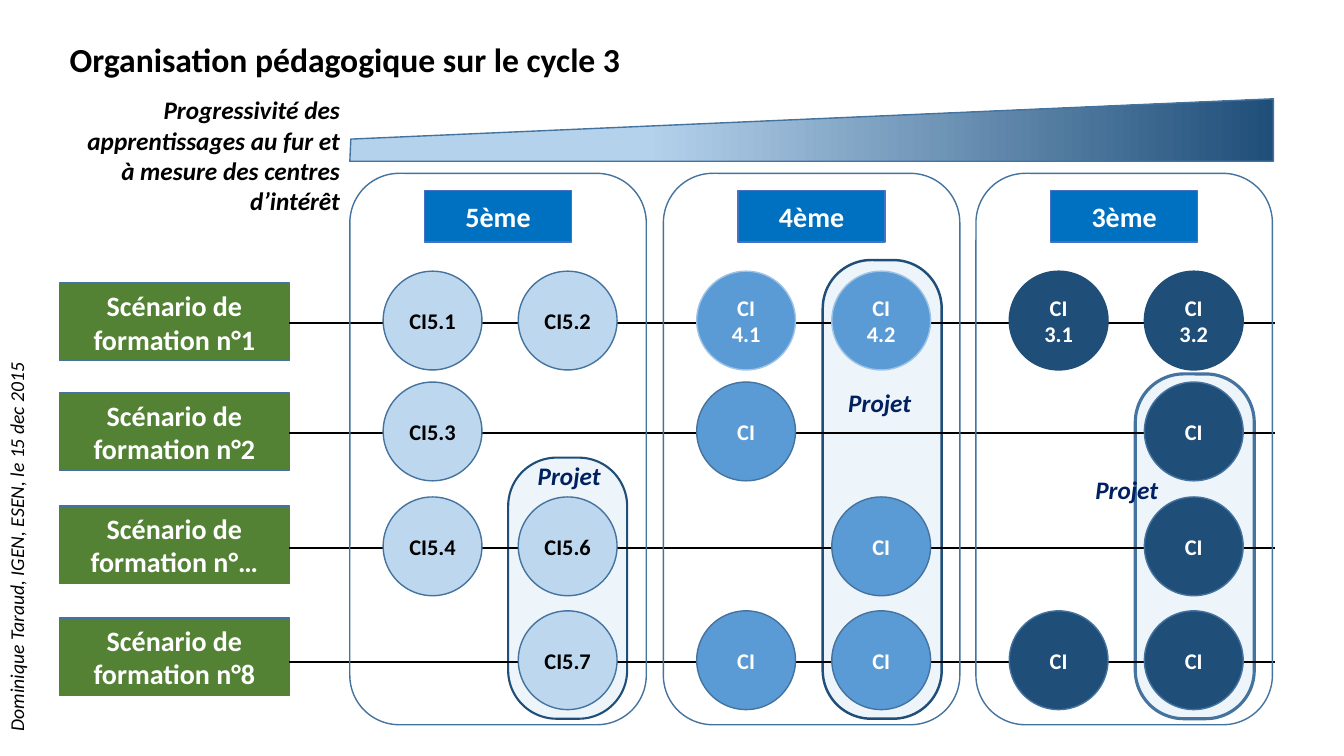
from dataclasses import dataclass

from pptx import Presentation
from pptx.dml.color import RGBColor
from pptx.enum.shapes import MSO_CONNECTOR, MSO_SHAPE
from pptx.enum.text import MSO_ANCHOR, PP_ALIGN
from pptx.oxml.ns import qn
from pptx.oxml.xmlchemy import OxmlElement
from pptx.util import Pt

PX = 9144  # 100 px to the inch


@dataclass(frozen=True)
class Theme:
    font: str = "Calibri"
    black: str = "000000"
    white: str = "FFFFFF"
    navy: str = "002060"
    outline: str = "43739E"
    green: str = "548235"
    tag: str = "0070C0"
    tag_line: str = "4472C4"
    pale: str = "BDD7EE"
    middle: str = "5B9BD5"
    middle_line: str = "9DC3E6"
    dark: str = "1F4E79"
    project: str = "DEEBF7"
    wedge_start: str = "B5D2EC"
    title_size: int = 24
    box_size: int = 20
    label_size: int = 18
    circle_size: int = 16
    credit_size: int = 14


theme = Theme()


def write(shape, text, size, color=theme.black, bold=True, italic=False,
          align=PP_ALIGN.CENTER, anchor=MSO_ANCHOR.MIDDLE):
    frame = shape.text_frame
    frame.word_wrap = True
    frame.vertical_anchor = anchor
    paragraph = frame.paragraphs[0]
    paragraph.alignment = align
    run = paragraph.add_run()
    run.text = text
    run.font.name = theme.font
    run.font.size = Pt(size)
    run.font.bold = bold
    run.font.italic = italic
    run.font.color.rgb = RGBColor.from_string(color)


def add_box(kind, left, top, width, height, fill=None, line=theme.outline, weight=1):
    """Add a preset shape without shadow; no fill colour means see-through."""
    shape = slide.shapes.add_shape(kind, left * PX, top * PX, width * PX, height * PX)
    shape.shadow.inherit = False
    if fill:
        shape.fill.solid()
        shape.fill.fore_color.rgb = RGBColor.from_string(fill)
    else:
        shape.fill.background()
    shape.line.color.rgb = RGBColor.from_string(line)
    shape.line.width = Pt(weight)
    return shape


presentation = Presentation()
presentation.slide_width = 1333 * PX
presentation.slide_height = 750 * PX
slide = presentation.slides.add_slide(presentation.slide_layouts[5])

title = slide.shapes.title
title.left, title.top, title.width, title.height = 59 * PX, 34 * PX, 1176 * PX, 50 * PX
write(title, "Organisation pédagogique sur le cycle 3", theme.title_size,
      align=PP_ALIGN.LEFT, anchor=MSO_ANCHOR.TOP)

credit = slide.shapes.add_textbox(-247 * PX, 455 * PX, 527 * PX, 34 * PX)
credit.rotation = 270
write(credit, "Dominique Taraud, IGEN, ESEN, le 15 dec 2015", theme.credit_size,
      bold=False, italic=True, align=PP_ALIGN.LEFT, anchor=MSO_ANCHOR.TOP)

# Project capsules, all ending on the same baseline
PROJECT_BOTTOM = 713
for left, top, line, weight in [
    (1126, 371, theme.outline, 2.25),
    (816, 258, theme.dark, 1.75),
    (504, 454, theme.dark, 1.5),
]:
    capsule = add_box(MSO_SHAPE.ROUNDED_RECTANGLE, left, top, 118, PROJECT_BOTTOM - top,
                      theme.project, line, weight)
    capsule.adjustments[0] = 0.407
    alpha = OxmlElement("a:alpha")
    alpha.set("val", "53000")
    capsule.element.spPr.find(qn("a:solidFill")).find(qn("a:srgbClr")).append(alpha)

# Scenario rows: box top, line height, number
rows = [(281, 320, "1"), (390, 430, "2"), (502, 544, "…"), (613, 657, "8")]
for box_top, line_y, number in rows:
    scenario = add_box(MSO_SHAPE.RECTANGLE, 59, box_top, 228, 77, theme.green)
    write(scenario, f"Scénario de formation n°{number}", theme.box_size, theme.white)
    connector = slide.shapes.add_connector(
        MSO_CONNECTOR.STRAIGHT, 287 * PX, line_y * PX, 1265 * PX, line_y * PX)
    connector.line.color.rgb = RGBColor.from_string(theme.black)
    connector.line.width = Pt(1.5)
    connector.element.spPr.append(OxmlElement("a:effectLst"))

# Class columns: left, name, circle fill, first-row outline, text colour,
# and for each row the left and right centres of interest
columns = [
    (347, "5ème", theme.pale, theme.outline, theme.black,
     [("CI5.1", "CI5.2"), ("CI5.3", ""), ("CI5.4", "CI5.6"), ("", "CI5.7")]),
    (658, "4ème", theme.middle, theme.middle_line, theme.white,
     [("CI 4.1", "CI 4.2"), ("CI", ""), ("", "CI"), ("CI", "CI")]),
    (968, "3ème", theme.dark, theme.dark, theme.white,
     [("CI 3.1", "CI 3.2"), ("", "CI"), ("", "CI"), ("CI", "CI")]),
]
for left, name, fill, first_line, text_color, centres in columns:
    add_box(MSO_SHAPE.ROUNDED_RECTANGLE, left, 172, 294, 547)
    tag = add_box(MSO_SHAPE.RECTANGLE, left + 74, 189, 146, 51, theme.tag, theme.tag_line)
    write(tag, name, theme.box_size, theme.white)
    for row, pair in enumerate(centres):
        line_y = rows[row][1]
        for offset, label in zip((33, 167), pair):
            if label:
                circle = add_box(MSO_SHAPE.OVAL, left + offset, line_y - 51, 98, 98, fill,
                                 theme.outline if row else first_line)
                write(circle, label, theme.circle_size, text_color)

# Progress wedge
builder = slide.shapes.build_freeform(348, 138, scale=PX)
builder.add_line_segments([(1263, 98), (1263, 160), (347, 160)], close=True)
wedge = builder.convert_to_shape()
wedge.shadow.inherit = False
wedge.fill.gradient()
wedge.fill.gradient_angle = 0
for stop, position, color in zip(wedge.fill.gradient_stops, (0.32, 1),
                                 (theme.wedge_start, theme.dark)):
    stop.position = position
    stop.color.rgb = RGBColor.from_string(color)
wedge.line.color.rgb = RGBColor.from_string(theme.outline)
wedge.line.width = Pt(1)

# Italic labels
progress = "Progressivité des apprentissages au fur et à mesure des centres d’intérêt"
for left, top, width, height, text, color, align in [
    (59, 89, 288, 131, progress, theme.black, PP_ALIGN.RIGHT),
    (507, 452, 115, 40, "Projet", theme.navy, PP_ALIGN.CENTER),
    (815, 379, 115, 40, "Projet", theme.navy, PP_ALIGN.CENTER),
    (1060, 466, 115, 40, "Projet", theme.navy, PP_ALIGN.CENTER),
]:
    label = slide.shapes.add_textbox(left * PX, top * PX, width * PX, height * PX)
    write(label, text, theme.label_size, color, italic=True, align=align,
          anchor=MSO_ANCHOR.TOP)

presentation.save("out.pptx")
